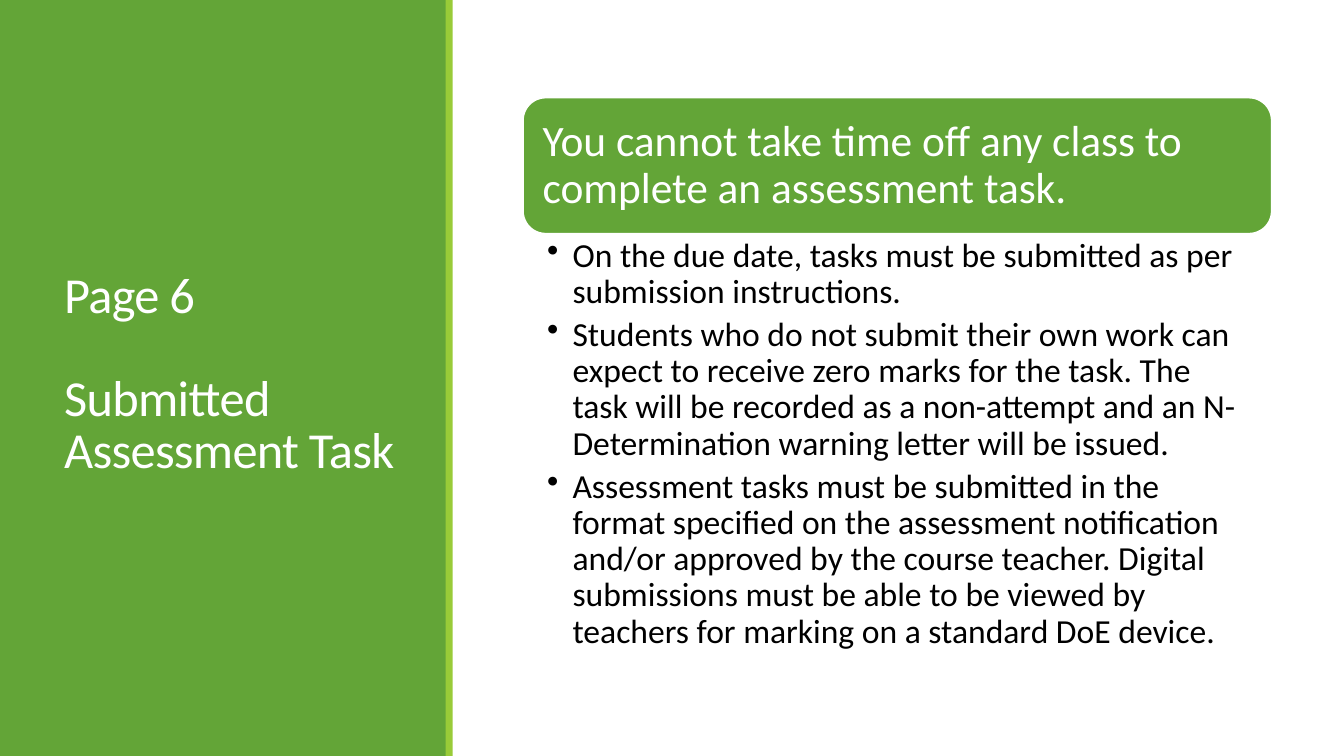
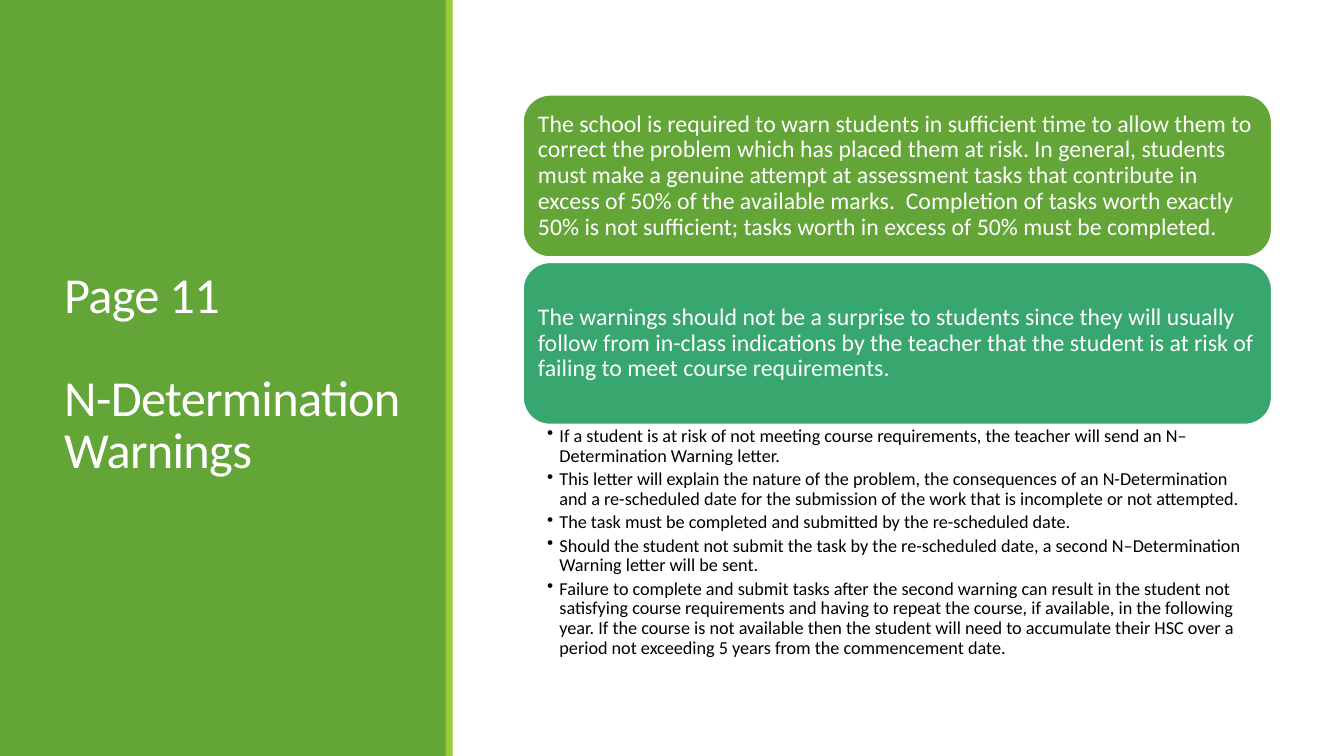
import pptx
import pptx.dml.color
import pptx.enum.shapes
import pptx.enum.text
import pptx.util
from lxml import etree

Cm, Pt = pptx.util.Cm, pptx.util.Pt
SHAPE = pptx.enum.shapes.MSO_SHAPE
ANCHOR = pptx.enum.text.MSO_ANCHOR
FONT = "Calibri"
GREEN, LIME, TEAL, WHITE, BLACK = "63A537", "99CB38", "37A76F", "FFFFFF", "000000"
SLIDE_W, SLIDE_H = 33.87, 19.05
PANEL = (0, 0, 11.25, SLIDE_H)
COLUMN_LEFT, COLUMN_WIDTH, CARD_GAP = 13.18, 18.87, 0.13

SLIDES = [
    dict(
        title=["Page 6", "Submitted Assessment Task"],
        top=2.46, card_height=3.43, card_size=31, card_inset=0.33,
        cards=[("You cannot take time off any class to complete an assessment task.", GREEN)],
        list_height=10.87, list_size=24, indent=0.64, list_insets=(0.61, 0.11, 0.61, 0.11),
        bullets=[
            "On the due date, tasks must be submitted as per submission instructions.",
            "Students who do not submit their own work can expect to receive zero marks for the task. "
            "The task will be recorded as a non-attempt and an N-Determination warning letter will be issued.",
            "Assessment tasks must be submitted in the format specified on the assessment notification "
            "and/or approved by the course teacher. Digital submissions must be able to be viewed by "
            "teachers for marking on a standard DoE device.",
        ],
    ),
    dict(
        title=["Page 11", "N-Determination Warnings"],
        top=2.39, card_height=4.09, card_size=17, card_inset=0.18,
        cards=[
            ("The school is required to warn students in sufficient time to allow them to correct the "
             "problem which has placed them at risk. In general, students must make a genuine attempt at "
             "assessment tasks that contribute in excess of 50% of the available marks.  Completion of "
             "tasks worth exactly 50% is not sufficient; tasks worth in excess of 50% must be completed.",
             GREEN),
            ("The warnings should not be a surprise to students since they will usually follow from "
             "in-class indications by the teacher that the student is at risk of failing to meet course "
             "requirements.", TEAL),
        ],
        list_height=6.15, list_size=13, indent=0.31, list_insets=(0.61, 0.06, 0.33, 0.06),
        bullets=[
            "If a student is at risk of not meeting course requirements, the teacher will send an "
            "N–Determination Warning letter.",
            "This letter will explain the nature of the problem, the consequences of an N-Determination "
            "and a re-scheduled date for the submission of the work that is incomplete or not attempted.",
            "The task must be completed and submitted by the re-scheduled date.",
            "Should the student not submit the task by the re-scheduled date, a second N–Determination "
            "Warning letter will be sent.",
            "Failure to complete and submit tasks after the second warning can result in the student not "
            "satisfying course requirements and having to repeat the course, if available, in the "
            "following year. If the course is not available then the student will need to accumulate "
            "their HSC over a period not exceeding 5 years from the commencement date.",
        ],
    ),
]


def rgb(code):
    """Return the colour for a hex string."""
    return pptx.dml.color.RGBColor.from_string(code)


def add_box(slide, kind, box, fill, line=None):
    """Add a filled preset shape, outlined if a line colour is given."""
    sp = slide.shapes.add_shape(kind, *map(Cm, box))
    sp.shadow.inherit = False
    sp.fill.solid()
    sp.fill.fore_color.rgb = rgb(fill)
    if line:
        sp.line.color.rgb = rgb(line)
        sp.line.width = Pt(1.25)
    else:
        sp.line.fill.background()
    return sp


def write(sp, texts, size, color, spacing, insets, anchor):
    """Fill a shape with left-aligned paragraphs and return them."""
    tf = sp.text_frame
    tf.word_wrap = True
    tf.vertical_anchor = anchor
    tf.margin_left, tf.margin_top, tf.margin_right, tf.margin_bottom = map(Cm, insets)
    tf.text = "\n".join(texts)
    for p in tf.paragraphs:
        p.alignment = pptx.enum.text.PP_ALIGN.LEFT
        p.line_spacing = spacing
        for r in p.runs:
            r.font.name = FONT
            r.font.size = Pt(size)
            r.font.color.rgb = rgb(color)
    return tf.paragraphs


def add_bullet(p, indent):
    """Give a paragraph a round bullet with a hanging indent."""
    pPr = p._p.get_or_add_pPr()
    pPr.set("marL", str(Cm(indent)))
    pPr.set("indent", str(-Cm(indent)))
    bullet = etree.SubElement(pPr, pptx.oxml.ns.qn("a:buChar"))
    bullet.set("char", "•")


def title_panel(slide, box, title):
    """Draw the green side panel with its edge stripe and title."""
    left, top, width, height = box
    add_box(slide, SHAPE.RECTANGLE, box, GREEN)
    add_box(slide, SHAPE.RECTANGLE, (left + width - 0.02, top, 0.18, height), LIME)
    sp = slide.shapes.add_textbox(Cm(left + 1.37), Cm(top + 1.45), Cm(9.1), Cm(height - 3.02))
    paragraphs = write(sp, title, 36, WHITE, 0.85, (0.25, 0.13, 0.25, 0.13), ANCHOR.MIDDLE)
    paragraphs[1].space_before = Pt(37)
    for p in paragraphs:
        for r in p.runs:
            r._r.get_or_add_rPr().set("spc", "-50")


def card(slide, box, text, fill, size, inset):
    """Draw a rounded statement card."""
    sp = add_box(slide, SHAPE.ROUNDED_RECTANGLE, box, fill, WHITE)
    write(sp, [text], size, WHITE, 0.9, [inset] * 4, ANCHOR.MIDDLE)


def bullet_list(slide, box, bullets, size, indent, insets):
    """Place a bulleted list in a box."""
    sp = slide.shapes.add_textbox(*map(Cm, box))
    for p in write(sp, bullets, size, BLACK, 0.9, insets, ANCHOR.TOP):
        p.space_after = Pt(round(size * 0.2, 1))
        add_bullet(p, indent)


def content_slide(prs, data):
    """Build a slide with a title panel, stacked cards and a list below them."""
    slide = prs.slides.add_slide(prs.slide_layouts[6])
    title_panel(slide, PANEL, data["title"])
    height = data["card_height"]
    for i, (text, fill) in enumerate(data["cards"]):
        top = data["top"] + i * (height + CARD_GAP)
        card(slide, (COLUMN_LEFT, top, COLUMN_WIDTH, height), text, fill,
             data["card_size"], data["card_inset"])
    bullet_list(slide, (COLUMN_LEFT, top + height, COLUMN_WIDTH, data["list_height"]),
                data["bullets"], data["list_size"], data["indent"], data["list_insets"])


def main():
    """Build and save the presentation."""
    prs = pptx.Presentation()
    prs.slide_width, prs.slide_height = Cm(SLIDE_W), Cm(SLIDE_H)
    for data in SLIDES:
        content_slide(prs, data)
    prs.save("out.pptx")


if __name__ == "__main__":
    main()
